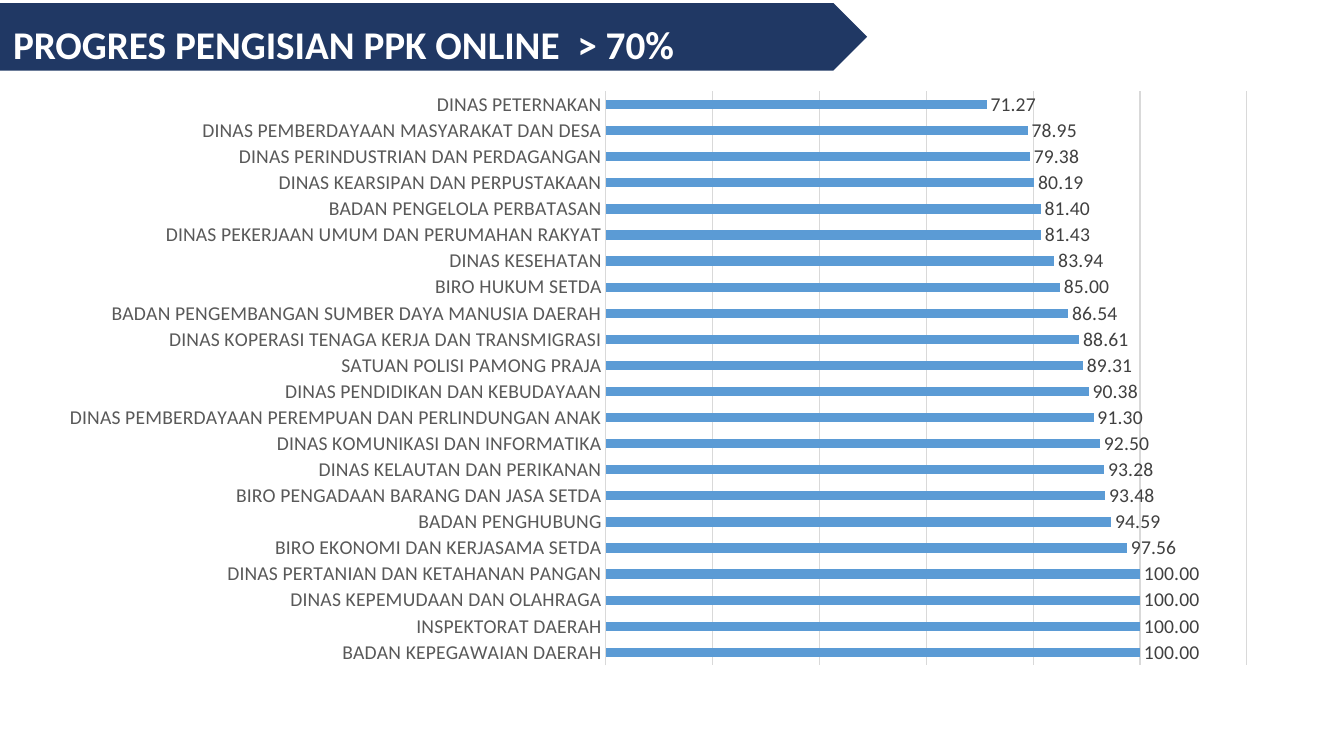
from dataclasses import dataclass

import pptx
import pptx.chart.data
import pptx.dml.color
import pptx.enum.chart
import pptx.enum.shapes
import pptx.enum.text
import pptx.util

COLOURS = {
    "banner": "203864",
    "title": "FFFFFF",
    "bar": "5B9BD5",
    "grid": "D9D9D9",
    "category": "595959",
    "value": "404040",
    "chart": "000000",
}
FONT = "Calibri"
SLIDE_WIDTH = pptx.util.Inches(13.33)
SLIDE_HEIGHT = pptx.util.Inches(7.5)


@dataclass(frozen=True)
class Area:
    """Position and size in percent of the slide."""

    left: float
    top: float
    width: float
    height: float

    def lengths(self) -> tuple[int, int, int, int]:
        return (
            round(SLIDE_WIDTH * self.left / 100),
            round(SLIDE_HEIGHT * self.top / 100),
            round(SLIDE_WIDTH * self.width / 100),
            round(SLIDE_HEIGHT * self.height / 100),
        )


@dataclass(frozen=True)
class Agency:
    name: str
    progress: float


BANNER = Area(0, 0.4, 64.52, 8.93)
TITLE = Area(0.23, 2, 63.39, 7.6)
CHART = Area(3.38, 10.53, 91.22, 79.07)

AGENCIES = [
    Agency("BADAN KEPEGAWAIAN DAERAH", 100),
    Agency("INSPEKTORAT DAERAH", 100),
    Agency("DINAS KEPEMUDAAN DAN OLAHRAGA", 100),
    Agency("DINAS PERTANIAN DAN KETAHANAN PANGAN", 100),
    Agency("BIRO EKONOMI DAN KERJASAMA SETDA", 97.56),
    Agency("BADAN PENGHUBUNG", 94.59),
    Agency("BIRO PENGADAAN BARANG DAN JASA SETDA", 93.48),
    Agency("DINAS KELAUTAN DAN PERIKANAN", 93.28),
    Agency("DINAS KOMUNIKASI DAN INFORMATIKA", 92.5),
    Agency("DINAS PEMBERDAYAAN PEREMPUAN DAN PERLINDUNGAN ANAK", 91.3),
    Agency("DINAS PENDIDIKAN DAN KEBUDAYAAN", 90.38),
    Agency("SATUAN POLISI PAMONG PRAJA", 89.31),
    Agency("DINAS KOPERASI TENAGA KERJA DAN TRANSMIGRASI", 88.61),
    Agency("BADAN PENGEMBANGAN SUMBER DAYA MANUSIA DAERAH", 86.54),
    Agency("BIRO HUKUM SETDA", 85),
    Agency("DINAS KESEHATAN", 83.94),
    Agency("DINAS PEKERJAAN UMUM DAN PERUMAHAN RAKYAT", 81.43),
    Agency("BADAN PENGELOLA PERBATASAN", 81.4),
    Agency("DINAS KEARSIPAN DAN PERPUSTAKAAN", 80.19),
    Agency("DINAS PERINDUSTRIAN DAN PERDAGANGAN", 79.38),
    Agency("DINAS PEMBERDAYAAN MASYARAKAT DAN DESA", 78.95),
    Agency("DINAS PETERNAKAN", 71.27),
]


def colour(name: str) -> pptx.dml.color.RGBColor:
    return pptx.dml.color.RGBColor.from_string(COLOURS[name])


def style_font(font, size: float, colour_name: str, bold: bool = False) -> None:
    font.name = FONT
    font.size = pptx.util.Pt(size)
    font.bold = bold
    font.color.rgb = colour(colour_name)


def style_line(line) -> None:
    line.color.rgb = colour("grid")
    line.width = pptx.util.Pt(0.75)


def draw_banner(page) -> None:
    banner = page.shapes.add_shape(
        pptx.enum.shapes.MSO_SHAPE.PENTAGON, *BANNER.lengths()
    )
    banner.shadow.inherit = False
    banner.fill.solid()
    banner.fill.fore_color.rgb = colour("banner")
    banner.line.fill.background()


def draw_title(page) -> None:
    box = page.shapes.add_textbox(*TITLE.lengths())
    box.text_frame.word_wrap = True
    box.text_frame.auto_size = pptx.enum.text.MSO_AUTO_SIZE.SHAPE_TO_FIT_TEXT
    para = box.text_frame.paragraphs[0]
    para.text = "PROGRES PENGISIAN PPK ONLINE  > 70%"
    style_font(para.font, 28, "title", bold=True)


def draw_chart(page) -> None:
    data = pptx.chart.data.CategoryChartData(number_format="0.00")
    data.categories = [agency.name for agency in AGENCIES]
    data.add_series("Series 1", [agency.progress for agency in AGENCIES])
    chart = page.shapes.add_chart(
        pptx.enum.chart.XL_CHART_TYPE.BAR_CLUSTERED, *CHART.lengths(), data
    ).chart
    chart.has_title = False
    chart.has_legend = False
    style_font(chart.font, 14, "chart")

    categories = chart.category_axis
    categories.major_tick_mark = pptx.enum.chart.XL_TICK_MARK.NONE
    categories.has_major_gridlines = False
    style_font(categories.tick_labels.font, 14, "category")
    style_line(categories.format.line)

    values = chart.value_axis
    values.visible = False
    values.minimum_scale = 0
    values.maximum_scale = 120
    values.major_unit = 20
    values.has_major_gridlines = True
    style_line(values.major_gridlines.format.line)

    plot = chart.plots[0]
    plot.gap_width = 182
    plot.vary_by_categories = False
    bars = plot.series[0]
    bars.format.fill.solid()
    bars.format.fill.fore_color.rgb = colour("bar")

    plot.has_data_labels = True
    labels = plot.data_labels
    labels.show_value = True
    labels.position = pptx.enum.chart.XL_LABEL_POSITION.OUTSIDE_END
    labels.number_format = "0.00"
    labels.number_format_is_linked = False
    style_font(labels.font, 14, "value")


def main() -> None:
    deck = pptx.Presentation()
    deck.slide_width = SLIDE_WIDTH
    deck.slide_height = SLIDE_HEIGHT
    page = deck.slides.add_slide(deck.slide_layouts[6])
    draw_banner(page)
    draw_title(page)
    draw_chart(page)
    deck.save("out.pptx")


if __name__ == "__main__":
    main()
